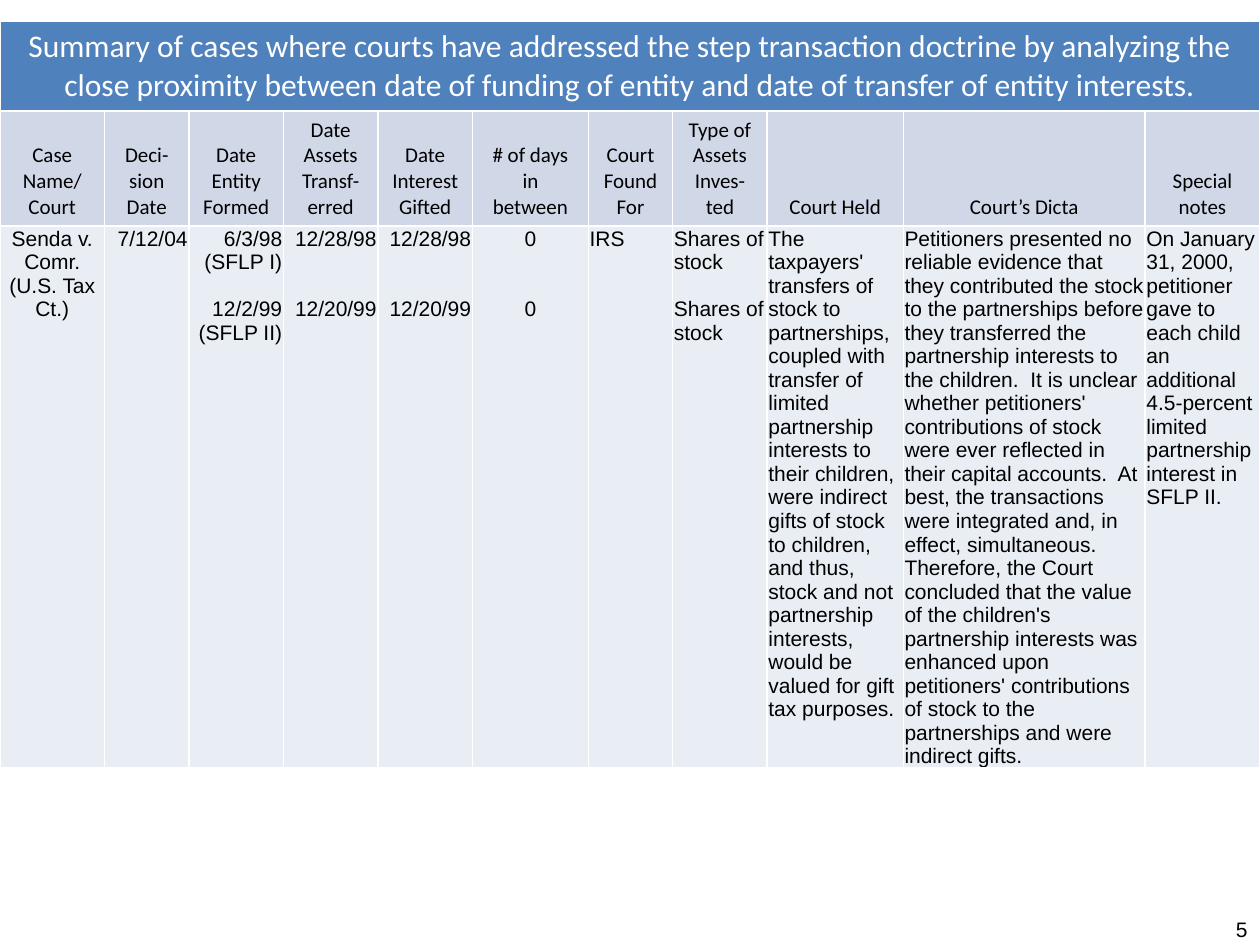
from dataclasses import dataclass

from pptx import Presentation
from pptx import util as u
from pptx.dml.color import RGBColor
from pptx.enum import text


@dataclass(frozen=True)
class Theme:
    heading_font: str = "Calibri"
    body_font: str = "Arial"
    title_size: int = 18
    text_size: int = 12
    line_height: float = 13.4
    white: str = "FFFFFF"
    black: str = "000000"
    title_fill: str = "4F81BD"
    header_fill: str = "D0D8E8"
    body_fill: str = "E9EDF4"


THEME = Theme()
LEFT, CENTER, RIGHT = text.PP_ALIGN.LEFT, text.PP_ALIGN.CENTER, text.PP_ALIGN.RIGHT

TITLE = (
    "Summary of cases where courts have addressed the step transaction doctrine by "
    "analyzing the close proximity between date of funding of entity and date of "
    "transfer of entity interests."
)
HELD = (
    "The taxpayers' transfers of stock to partnerships, coupled with transfer of limited "
    "partnership interests to their children, were indirect gifts of stock to children, "
    "and thus, stock and not partnership interests, would be valued for gift tax purposes."
)
DICTA = (
    "Petitioners presented no reliable evidence that they contributed the stock to the "
    "partnerships before they transferred the partnership interests to the children.  It is "
    "unclear whether petitioners' contributions of stock were ever reflected in their capital "
    "accounts.  At best, the transactions were integrated and, in effect, simultaneous.  "
    "Therefore, the Court concluded that the value of the children's partnership interests was "
    "enhanced upon petitioners' contributions of stock to the partnerships and were indirect gifts."
)
NOTES = (
    "On January 31, 2000, petitioner gave to each child an additional 4.5-percent limited "
    "partnership interest in SFLP II."
)

# Width, header lines, body lines, body alignment, lines skipped before the second body line
COLUMNS = [
    (0.83, ["Case Name/", "Court"], ["Senda v. Comr. (U.S. Tax Ct.)"], CENTER, 0),
    (0.67, ["Deci-sion Date"], ["7/12/04"], RIGHT, 0),
    (0.75, ["Date Entity Formed"], ["6/3/98 (SFLP I)", "12/2/99", "(SFLP II)"], RIGHT, 1),
    (0.75, ["Date Assets Transf-erred"], ["12/28/98", "12/20/99"], RIGHT, 2),
    (0.75, ["Date Interest Gifted"], ["12/28/98", "12/20/99"], RIGHT, 2),
    (0.92, ["# of days in between"], ["0", "0"], CENTER, 2),
    (0.67, ["Court Found For"], ["IRS"], LEFT, 0),
    (0.75, ["Type of Assets Inves-ted"], ["Shares of stock", "Shares of stock"], LEFT, 1),
    (1.08, ["Court Held"], [HELD], LEFT, 0),
    (1.92, ["Court’s Dicta"], [DICTA], LEFT, 0),
    (0.91, ["Special notes"], [NOTES], LEFT, 0),
]
ROW_HEIGHTS = [0.7, 0.91, 4.3]


def write_text(frame, lines, *, font=THEME.body_font, size=THEME.text_size,
               color=THEME.black, align=LEFT, gap=0):
    """Write one paragraph per line; gap is the number of lines skipped before the second."""
    frame.word_wrap = True
    for index, line in enumerate(lines):
        paragraph = frame.paragraphs[0] if index == 0 else frame.add_paragraph()
        paragraph.alignment = align
        if index == 1 and gap:
            paragraph.space_before = u.Pt(gap * THEME.line_height)
        run = paragraph.add_run()
        run.text = line
        run.font.name = font
        run.font.size = u.Pt(size)
        run.font.bold = False
        run.font.color.rgb = RGBColor.from_string(color)


def fill_cell(cell, color):
    cell.fill.solid()
    cell.fill.fore_color.rgb = RGBColor.from_string(color)


def add_case_table(slide):
    shape = slide.shapes.add_table(
        len(ROW_HEIGHTS), len(COLUMNS), u.Inches(0), u.Inches(0.17),
        u.Inches(10), u.Inches(sum(ROW_HEIGHTS)))
    table = shape.table
    table.horz_banding = False
    for row, height in zip(table.rows, ROW_HEIGHTS):
        row.height = u.Inches(height)

    title = table.cell(0, 0)
    title.merge(table.cell(0, len(COLUMNS) - 1))
    fill_cell(title, THEME.title_fill)
    write_text(title.text_frame, [TITLE], font=THEME.heading_font,
               size=THEME.title_size, color=THEME.white, align=CENTER)

    for index, (width, heading, lines, align, gap) in enumerate(COLUMNS):
        table.columns[index].width = u.Inches(width)

        header = table.cell(1, index)
        header.vertical_anchor = text.MSO_ANCHOR.BOTTOM
        fill_cell(header, THEME.header_fill)
        write_text(header.text_frame, heading, font=THEME.heading_font, align=CENTER)

        body = table.cell(2, index)
        body.margin_left = body.margin_right = body.margin_top = u.Inches(0.01)
        body.margin_bottom = u.Inches(0)
        fill_cell(body, THEME.body_fill)
        write_text(body.text_frame, lines, align=align, gap=gap)


def add_page_number(slide, number):
    box = slide.shapes.add_textbox(
        u.Inches(7.67), u.Inches(7.25), u.Inches(2.33), u.Inches(0.25))
    box.text_frame.vertical_anchor = text.MSO_ANCHOR.MIDDLE
    write_text(box.text_frame, [number], align=RIGHT)


def main():
    presentation = Presentation()
    presentation.slide_width = u.Inches(10)
    presentation.slide_height = u.Inches(7.5)
    slide = presentation.slides.add_slide(presentation.slide_layouts[6])
    add_case_table(slide)
    add_page_number(slide, "5")
    presentation.save("out.pptx")


if __name__ == "__main__":
    main()
